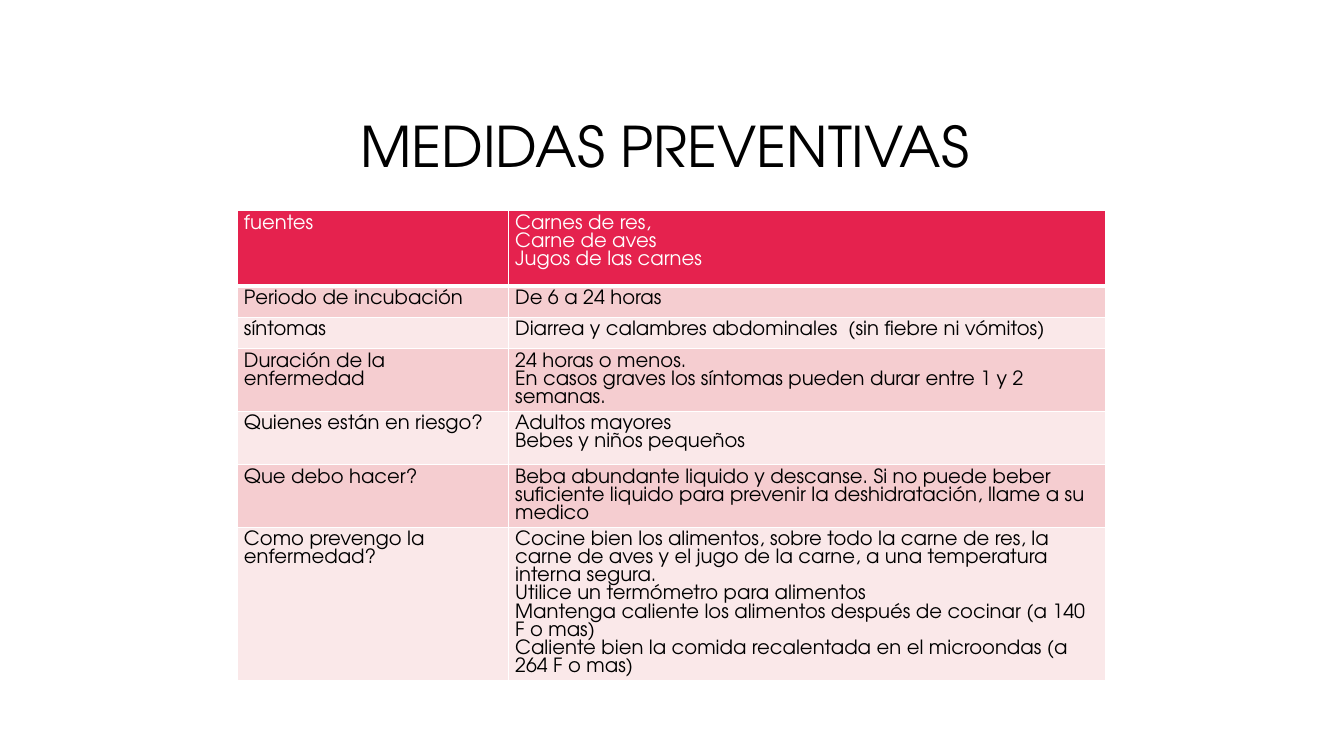
import pptx
import pptx.dml.color
import pptx.enum.text
import pptx.oxml
import pptx.oxml.ns
import pptx.util
from pptx.util import Inches

FONT = "TeX Gyre Adventor"
WHITE, BLACK, RED = "FFFFFF", "000000", "E5224E"
BANDS = ("F5CDD0", "FAE8E9")
COLUMN_WIDTHS = (2.69, 5.93)
ROWS = [
    (0.75, "fuentes", "Carnes de res,\nCarne de aves\nJugos de las carnes"),
    (0.31, "Periodo de incubación", "De 6 a 24 horas"),
    (0.31, "síntomas", "Diarrea y calambres abdominales  (sin fiebre ni vómitos)"),
    (0.53, "Duración de la enfermedad",
     "24 horas o menos.\n"
     "En casos graves los síntomas pueden durar entre 1 y 2 semanas."),
    (0.53, "Quienes están en riesgo?", "Adultos mayores\nBebes y niños pequeños"),
    (0.53, "Que debo hacer?",
     "Beba abundante liquido y descanse. Si no puede beber suficiente liquido "
     "para prevenir la deshidratación, llame a su medico"),
    (1.2, "Como prevengo la enfermedad?",
     "Cocine bien los alimentos, sobre todo la carne de res, la carne de aves "
     "y el jugo de la carne, a una temperatura interna segura.\n"
     "Utilice un termómetro para alimentos\n"
     "Mantenga caliente los alimentos después de cocinar (a 140 F o mas)\n"
     "Caliente bien la comida recalentada en el microondas (a 264 F o mas)"),
]


def rgb(value):
    """Return the colour for a hex string."""
    return pptx.dml.color.RGBColor.from_string(value)


def format_font(p, size, color):
    """Set the font of a whole paragraph."""
    p.font.name = FONT
    p.font.size = pptx.util.Pt(size)
    p.font.bold = False
    p.font.color.rgb = rgb(color)


def add_borders(cell, bottom):
    """Draw white borders round a cell, with the given bottom width in points."""
    widths = {"L": 1, "R": 1, "T": 1, "B": bottom}
    tc_pr = cell._tc.get_or_add_tcPr()
    for i, (side, width) in enumerate(widths.items()):
        line = pptx.oxml.parse_xml(
            f'<a:ln{side} {pptx.oxml.ns.nsdecls("a")} w="{pptx.util.Pt(width)}">'
            f'<a:solidFill><a:srgbClr val="{WHITE}"/></a:solidFill></a:ln{side}>')
        tc_pr.insert(i, line)


def format_cell(cell, text, fill, color, bottom):
    """Fill one table cell with text and style."""
    cell.text = text
    cell.margin_left = cell.margin_right = Inches(0.07)
    cell.margin_top = cell.margin_bottom = Inches(0.04)
    cell.fill.solid()
    cell.fill.fore_color.rgb = rgb(fill)
    for p in cell.text_frame.paragraphs:
        format_font(p, 14, color)
    add_borders(cell, bottom)


def place_title(s, left, top, width, height):
    """Place the centred slide title in its box."""
    sp = s.shapes.title
    sp.left, sp.top = Inches(left), Inches(top)
    sp.width, sp.height = Inches(width), Inches(height)
    tf = sp.text_frame
    tf.text = "MEDIDAS PREVENTIVAS "
    tf.vertical_anchor = pptx.enum.text.MSO_ANCHOR.MIDDLE
    tf.auto_size = pptx.enum.text.MSO_AUTO_SIZE.NONE
    p = tf.paragraphs[0]
    p.alignment = pptx.enum.text.PP_ALIGN.CENTER
    p.line_spacing = 0.9
    format_font(p, 40, BLACK)


def add_measures_table(s, left, top):
    """Add the table of preventive measures at the given corner."""
    width, height = sum(COLUMN_WIDTHS), sum(row[0] for row in ROWS)
    table = s.shapes.add_table(
        len(ROWS), len(COLUMN_WIDTHS), Inches(left), Inches(top),
        Inches(width), Inches(height)).table
    for column, column_width in zip(table.columns, COLUMN_WIDTHS):
        column.width = Inches(column_width)
    for i, (row_height, *texts) in enumerate(ROWS):
        table.rows[i].height = Inches(row_height)
        style = (BANDS[(i - 1) % 2], BLACK, 1) if i else (RED, WHITE, 3)
        for cell, text in zip(table.rows[i].cells, texts):
            format_cell(cell, text, *style)


def main():
    """Build and save the slide."""
    prs = pptx.Presentation()
    prs.slide_width, prs.slide_height = Inches(13.33), Inches(7.5)
    s = prs.slides.add_slide(prs.slide_layouts[5])
    s.background.fill.solid()
    s.background.fill.fore_color.rgb = rgb(WHITE)
    place_title(s, 2.36, 0.94, 8.62, 1.09)
    add_measures_table(s, 2.35, 2.09)
    prs.save("out.pptx")


if __name__ == "__main__":
    main()
